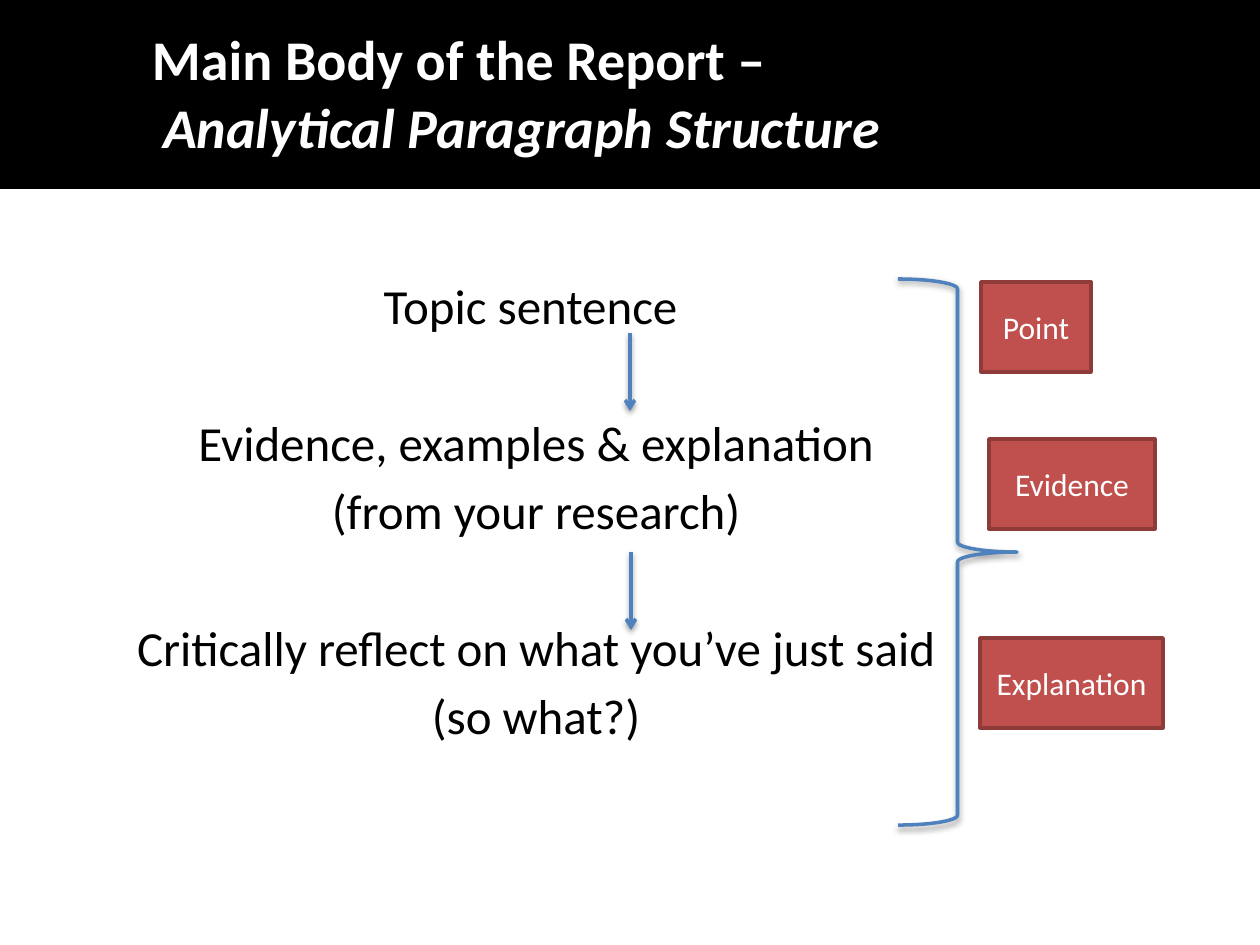
from lxml.etree import SubElement
from pptx import Presentation
from pptx.dml.color import RGBColor
from pptx.enum.shapes import MSO_CONNECTOR, MSO_SHAPE
from pptx.enum.text import MSO_ANCHOR, PP_ALIGN
from pptx.oxml.ns import qn
from pptx.util import Emu, Pt

COLORS = {
    "header": "000000",
    "title": "FFFFFF",
    "body": "000000",
    "flow": "4F81BD",
    "label": "C0504D",
    "label_line": "8E3B39",
    "label_text": "FFFFFF",
    "shadow": "000000",
}


def px(length):
    return Emu(round(length * 914400 / 126))


def style_flow(shape):
    shape.line.color.rgb = RGBColor.from_string(COLORS["flow"])
    shape.line.width = Pt(2)
    effects = SubElement(shape._element.spPr, qn("a:effectLst"))
    shadow = SubElement(effects, qn("a:outerShdw"), blurRad="40000", dist="20000",
                        dir="5400000", rotWithShape="0")
    color = SubElement(shadow, qn("a:srgbClr"), val=COLORS["shadow"])
    SubElement(color, qn("a:alpha"), val="38000")


presentation = Presentation()
presentation.slide_width = px(1260)
presentation.slide_height = px(945)
slide = presentation.slides.add_slide(presentation.slide_layouts[6])

header = slide.shapes.add_shape(MSO_SHAPE.RECTANGLE, 0, 0, px(1260), px(189))
header.shadow.inherit = False
header.fill.solid()
header.fill.fore_color.rgb = RGBColor.from_string(COLORS["header"])
header.line.fill.background()

title_lines = [
    ("Main Body of the Report –", 0, False),
    ("Analytical Paragraph Structure", 11, True),
]
body_lines = [
    ("Topic sentence ", 0),
    ("Evidence, examples & explanation", 78),
    ("(from your research)", 9),
    ("Critically reflect on what you’ve just said", 78),
    ("(so what?)", 9),
]

title = slide.shapes.add_textbox(px(152), px(25), px(837), px(140))
body = slide.shapes.add_textbox(px(16), px(276), px(1040), px(480))
for text_box, lines in ((title, title_lines), (body, body_lines)):
    frame = text_box.text_frame
    frame.word_wrap = True
    frame.margin_left = frame.margin_right = frame.margin_top = frame.margin_bottom = 0
    frame.text = "\n".join(line[0] for line in lines)

for paragraph, (text, indent, italic) in zip(title.text_frame.paragraphs, title_lines):
    paragraph._p.get_or_add_pPr().set("marL", str(px(indent)))
    font = paragraph.runs[0].font
    font.name = "Calibri"
    font.size = Pt(32)
    font.bold = True
    font.italic = italic
    font.color.rgb = RGBColor.from_string(COLORS["title"])

for paragraph, (text, gap) in zip(body.text_frame.paragraphs, body_lines):
    paragraph.alignment = PP_ALIGN.CENTER
    if gap:
        paragraph.space_before = px(gap)
    font = paragraph.runs[0].font
    font.name = "Calibri"
    font.size = Pt(28)
    font.color.rgb = RGBColor.from_string(COLORS["body"])

for x, top in ((630, 333), (631, 552)):
    arrow = slide.shapes.add_connector(MSO_CONNECTOR.STRAIGHT, px(x), px(top), px(x), px(top + 78))
    style_flow(arrow)
    SubElement(arrow.line._get_or_add_ln(), qn("a:tailEnd"), type="arrow")

brace = slide.shapes.add_shape(MSO_SHAPE.LEFT_BRACE, px(898), px(279), px(119), px(546))
brace.rotation = 180
brace.fill.background()
style_flow(brace)

for text, left, top, width in (
    ("Point", 981, 282, 110),
    ("Evidence", 989, 439, 166),
    ("Explanation", 980, 638, 183),
):
    label = slide.shapes.add_shape(MSO_SHAPE.RECTANGLE, px(left), px(top), px(width), px(90))
    label.shadow.inherit = False
    label.fill.solid()
    label.fill.fore_color.rgb = RGBColor.from_string(COLORS["label"])
    label.line.color.rgb = RGBColor.from_string(COLORS["label_line"])
    label.line.width = Pt(2)
    frame = label.text_frame
    frame.text = text
    frame.vertical_anchor = MSO_ANCHOR.MIDDLE
    paragraph = frame.paragraphs[0]
    paragraph.alignment = PP_ALIGN.CENTER
    font = paragraph.runs[0].font
    font.name = "Calibri"
    font.size = Pt(18)
    font.color.rgb = RGBColor.from_string(COLORS["label_text"])

presentation.save("out.pptx")
